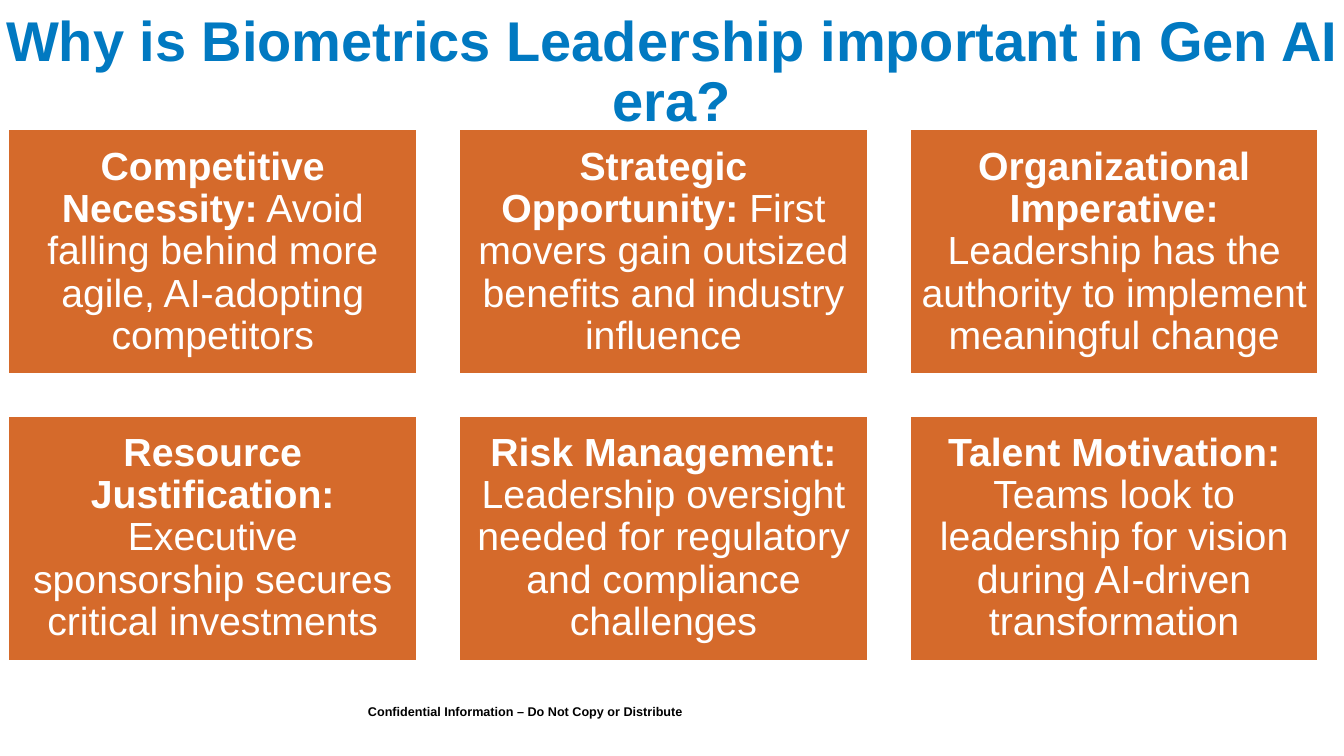
"""Build the slide on why biometrics leadership matters in the Gen AI era."""
from pptx import Presentation
from pptx import util as u
from pptx.dml.color import RGBColor
from pptx.enum import shapes, text

BLUE = RGBColor(0x01, 0x79, 0xC1)
ORANGE = RGBColor(0xD5, 0x6A, 0x2B)
WHITE = RGBColor(0xFF, 0xFF, 0xFF)
BLACK = RGBColor(0x00, 0x00, 0x00)

GRID_LEFT, GRID_TOP = 0.08, 1.28
CARD_WIDTH, CARD_HEIGHT = 4.06, 2.44
COLUMN_STEP, ROW_STEP = 4.47, 2.84
COLUMNS = 3
CARD_MARGINS = {"left": 0.1, "top": 0.12, "right": 0.1, "bottom": 0.12}

TITLE = "Why is Biometrics Leadership important in Gen AI era?"
FOOTER = "Confidential Information – Do Not Copy or Distribute"
REASONS = [
    ("Competitive Necessity:", " Avoid falling behind more agile, AI-adopting competitors"),
    ("Strategic Opportunity:", " First movers gain outsized benefits and industry influence"),
    ("Organizational Imperative:", " Leadership has the authority to implement meaningful change"),
    ("Resource Justification:", " Executive sponsorship secures critical investments"),
    ("Risk Management:", " Leadership oversight needed for regulatory and compliance challenges"),
    ("Talent Motivation:", " Teams look to leadership for vision during AI-driven transformation"),
]


def apply_format(target, values):
    """Set each named attribute of the target."""
    for name, value in values.items():
        setattr(target, name, value)


def add_run(paragraph, wording, size, color, bold):
    """Append one formatted run."""
    run = paragraph.add_run()
    run.text = wording
    apply_format(run.font, {"name": "Arial", "size": u.Pt(size), "bold": bold})
    run.font.color.rgb = color


def add_label(slide, box, wording, size, color, frame_format, paragraph_format):
    """Add a bold single-paragraph text box."""
    label = slide.shapes.add_textbox(*map(u.Inches, box))
    apply_format(label.text_frame, {"word_wrap": True, **frame_format})
    paragraph = label.text_frame.paragraphs[0]
    apply_format(paragraph, paragraph_format)
    add_run(paragraph, wording, size, color, True)


def add_card(slide, index, heading, detail):
    """Add a reason card in its grid cell."""
    row, column = divmod(index, COLUMNS)
    box = (GRID_LEFT + column * COLUMN_STEP, GRID_TOP + row * ROW_STEP, CARD_WIDTH, CARD_HEIGHT)
    card = slide.shapes.add_shape(shapes.MSO_SHAPE.RECTANGLE, *map(u.Inches, box))
    card.shadow.inherit = False
    card.fill.solid()
    card.fill.fore_color.rgb = ORANGE
    card.line.color.rgb = WHITE
    card.line.width = u.Pt(2)
    margins = {f"margin_{side}": u.Inches(inset) for side, inset in CARD_MARGINS.items()}
    apply_format(card.text_frame, {
        "word_wrap": True, "vertical_anchor": text.MSO_ANCHOR.MIDDLE, **margins})
    paragraph = card.text_frame.paragraphs[0]
    apply_format(paragraph, {"alignment": text.PP_ALIGN.CENTER, "line_spacing": 0.9})
    add_run(paragraph, heading, 28, WHITE, True)
    add_run(paragraph, detail, 28, WHITE, False)


def main():
    """Assemble and save the slide."""
    presentation = Presentation()
    apply_format(presentation, {"slide_width": u.Inches(13.33), "slide_height": u.Inches(7.5)})
    slide = presentation.slides.add_slide(presentation.slide_layouts[6])
    add_label(slide, (0.56, 6.93, 9.44, 0.25), FOOTER, 9, BLACK,
              {"margin_left": u.Inches(3.09)}, {"alignment": text.PP_ALIGN.LEFT})
    add_label(slide, (-0.5, 0.08, 14.33, 1.06), TITLE, 40, BLUE,
              {"vertical_anchor": text.MSO_ANCHOR.TOP},
              {"alignment": text.PP_ALIGN.CENTER, "line_spacing": 0.9})
    for index, (heading, detail) in enumerate(REASONS):
        add_card(slide, index, heading, detail)
    presentation.save("out.pptx")


if __name__ == "__main__":
    main()
